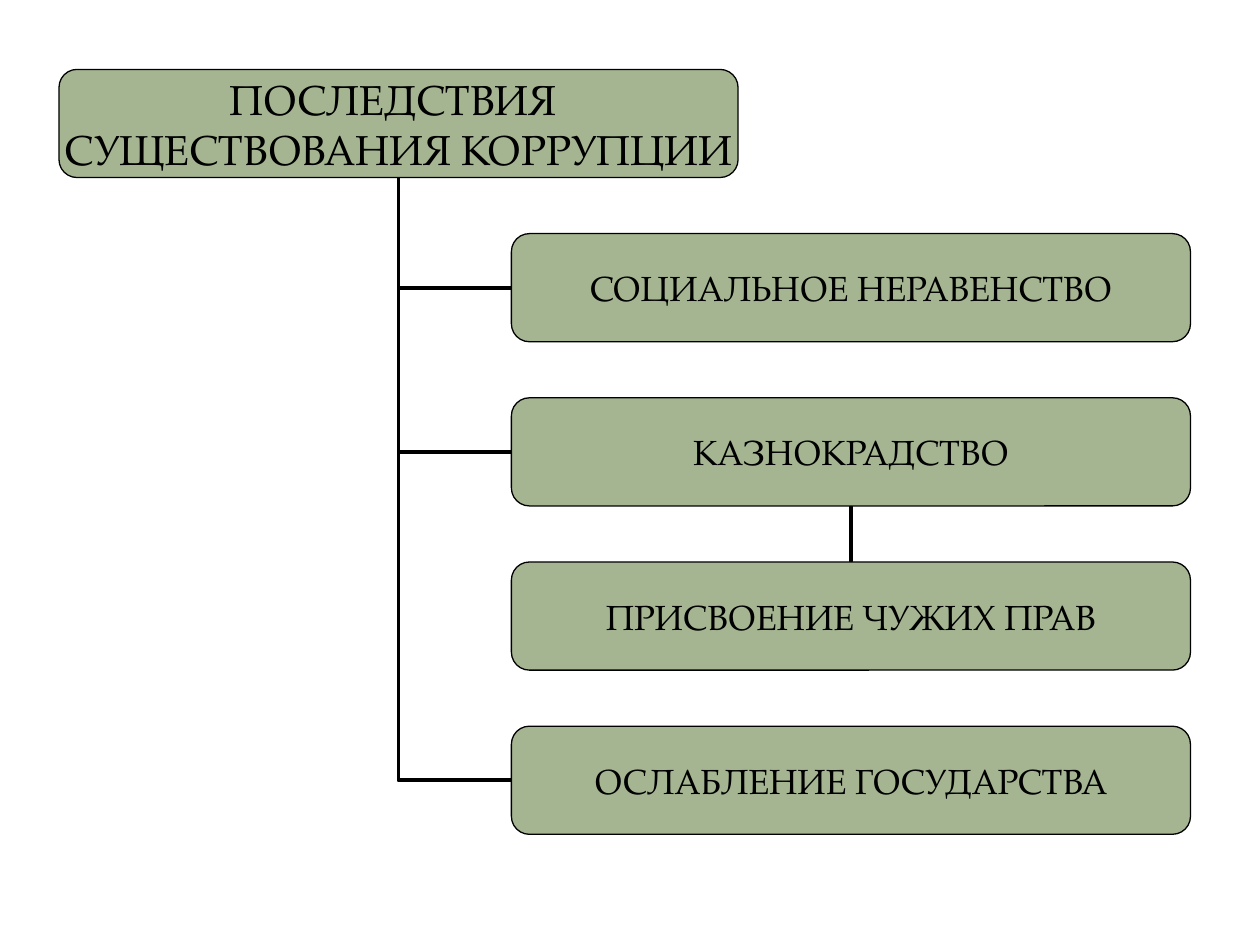
from pptx import Presentation
from pptx.dml.color import RGBColor
from pptx.enum.shapes import MSO_CONNECTOR as CONN, MSO_SHAPE as SHAPE
from pptx.enum.text import MSO_ANCHOR, PP_ALIGN
from pptx.oxml.ns import qn
from pptx.util import Cm, Pt
from lxml import etree

# Content
HEADING = ["ПОСЛЕДСТВИЯ ", "СУЩЕСТВОВАНИЯ КОРРУПЦИИ"]
EFFECTS = [
    "СОЦИАЛЬНОЕ НЕРАВЕНСТВО",
    "КАЗНОКРАДСТВО",
    "ПРИСВОЕНИЕ ЧУЖИХ ПРАВ",
    "ОСЛАБЛЕНИЕ ГОСУДАРСТВА",
]
BRANCHES = [0, 1, 3]   # effects joined to the heading
CHAIN = (1, 2)         # effects joined to each other

# Layout in cm
LEFT, TOP, INDENT = 1.19, 1.4, 10.31
BOX_W, BOX_H, STEP = 13.69, 2.18, 3.31
FONT, GREEN, BLACK = "TeX Gyre Pagella", "A5B592", "000000"


def paint(color, value):
    color.rgb = RGBColor.from_string(value)


def add_box(s, left, row, lines, size):
    sp = s.shapes.add_shape(SHAPE.ROUNDED_RECTANGLE, Cm(left), Cm(TOP + row * STEP),
                            Cm(BOX_W), Cm(BOX_H))
    sp.shadow.inherit = False
    sp.fill.solid()
    paint(sp.fill.fore_color, GREEN)
    paint(sp.line.color, BLACK)
    sp.line.width = Pt(0.75)
    tf = sp.text_frame
    tf.word_wrap = False
    tf.vertical_anchor = MSO_ANCHOR.MIDDLE
    tf.margin_left = tf.margin_right = tf.margin_top = tf.margin_bottom = 0
    for i, line in enumerate(lines):
        p = tf.add_paragraph() if i else tf.paragraphs[0]
        p.alignment = PP_ALIGN.CENTER
        r = p.add_run()
        r.text = line
        r.font.name, r.font.size = FONT, Pt(size)
        paint(r.font.color, BLACK)
    return sp


def join(s, kind, start, start_side, end, end_side):
    c = s.shapes.add_connector(kind, 0, 0, 0, 0)
    c.begin_connect(start, start_side)
    c.end_connect(end, end_side)
    paint(c.line.color, BLACK)
    c.line.width = Pt(2.25)
    sp_pr = c._element.spPr
    etree.SubElement(sp_pr, qn("a:effectLst"))
    if kind == CONN.ELBOW:  # a single bend
        sp_pr.find(qn("a:prstGeom")).set("prst", "bentConnector2")
    s.shapes._spTree.insert(2, c._element)  # behind the boxes


prs = Presentation()
prs.slide_width, prs.slide_height = Cm(25.4), Cm(19.05)
s = prs.slides.add_slide(prs.slide_layouts[6])

# Boxes
heading = add_box(s, LEFT, 0, HEADING, 24)
effects = [add_box(s, INDENT, row, [text], 20) for row, text in enumerate(EFFECTS, 1)]

# Connectors
for i in BRANCHES:
    join(s, CONN.ELBOW, effects[i], 1, heading, 2)
upper, lower = CHAIN
join(s, CONN.STRAIGHT, effects[lower], 0, effects[upper], 2)

prs.save("out.pptx")
